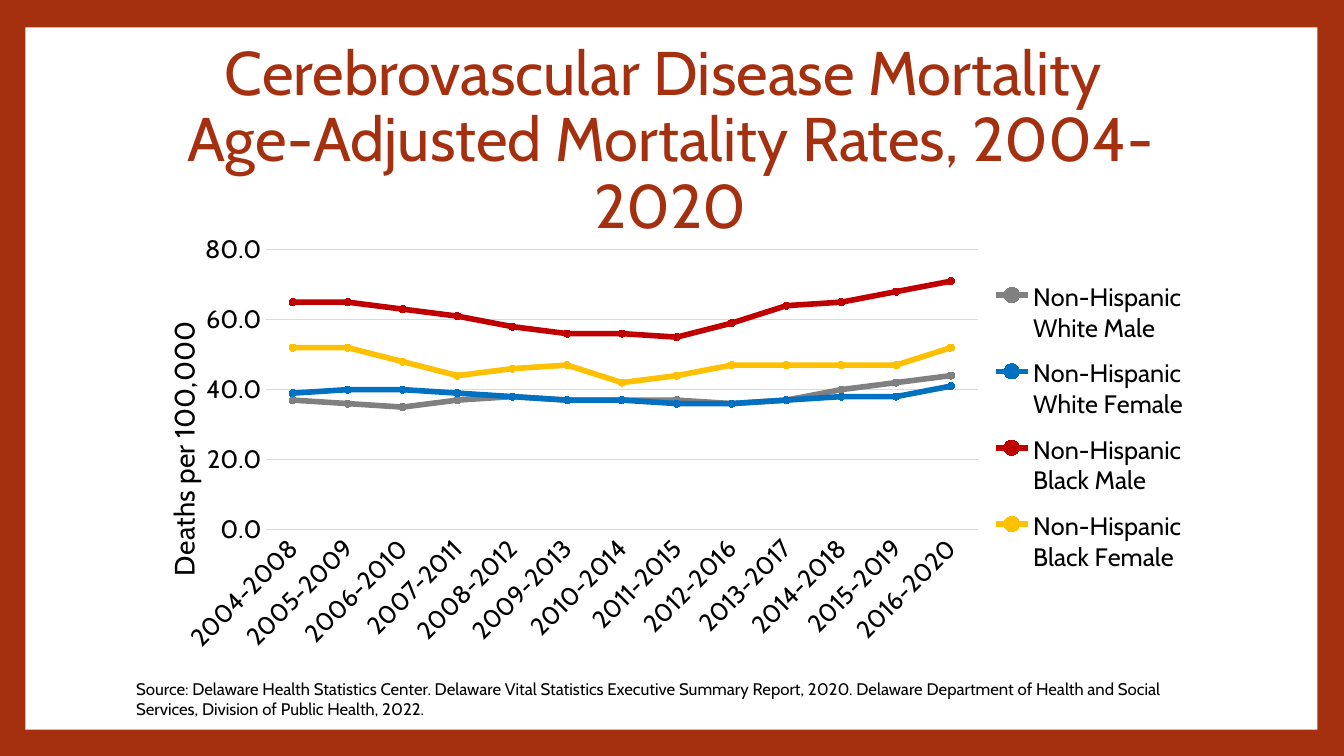
from lxml import etree
from pptx import Presentation
from pptx.chart.data import CategoryChartData
from pptx.dml.color import RGBColor
from pptx.enum.chart import XL_CHART_TYPE, XL_LEGEND_POSITION, XL_MARKER_STYLE, XL_TICK_MARK
from pptx.enum.shapes import MSO_SHAPE
from pptx.enum.text import MSO_ANCHOR, PP_ALIGN
from pptx.oxml.ns import qn
from pptx.util import Cm, Pt

LINE_MARKERS = XL_CHART_TYPE.LINE_MARKERS
LEGEND_RIGHT = XL_LEGEND_POSITION.RIGHT
CIRCLE = XL_MARKER_STYLE.CIRCLE
NO_TICK = XL_TICK_MARK.NONE
RECTANGLE = MSO_SHAPE.RECTANGLE
TOP, MIDDLE = MSO_ANCHOR.TOP, MSO_ANCHOR.MIDDLE
LEFT, CENTER = PP_ALIGN.LEFT, PP_ALIGN.CENTER

FONT = "Cabin"
COLORS = {
    "rust": "A5300F",
    "panel": "FFFFFF",
    "text": "000000",
    "grid": "D9D9D9",
    "gray": "808080",
    "blue": "0070C0",
    "red": "C00000",
    "gold": "FFC000",
}
CONTENT_LEFT, CONTENT_WIDTH = Cm(3.18), Cm(27.43)

TITLE = "Cerebrovascular Disease Mortality \vAge-Adjusted Mortality Rates, 2004-2020"
SOURCE = (
    "Source: Delaware Health Statistics Center. Delaware Vital Statistics Executive "
    "Summary Report, 2020. Delaware Department of Health and Social Services, "
    "Division of Public Health, 2022."
)
PERIODS = [f"{year}-{year + 4}" for year in range(2004, 2017)]
RATES = [
    ("Non-Hispanic White Male", "gray",
     (37, 36, 35, 37, 38, 37, 37, 37, 36, 37, 40, 42, 44)),
    ("Non-Hispanic White Female", "blue",
     (39, 40, 40, 39, 38, 37, 37, 36, 36, 37, 38, 38, 41)),
    ("Non-Hispanic Black Male", "red",
     (65, 65, 63, 61, 58, 56, 56, 55, 59, 64, 65, 68, 71)),
    ("Non-Hispanic Black Female", "gold",
     (52, 52, 48, 44, 46, 47, 42, 44, 47, 47, 47, 47, 52)),
]


def rgb(name):
    return RGBColor.from_string(COLORS[name])


def set_font(font, size, color="text"):
    font.name = FONT
    font.size = Pt(size)
    font.bold = False
    font.color.rgb = rgb(color)


def set_line(line, color, width):
    line.color.rgb = rgb(color)
    line.width = Pt(width)


def add_text(slide, text, top, height, size, color="text", align=LEFT,
             anchor=TOP, spacing=1.0):
    box = slide.shapes.add_textbox(CONTENT_LEFT, top, CONTENT_WIDTH, height)
    frame = box.text_frame
    frame.word_wrap = True
    frame.vertical_anchor = anchor
    para = frame.paragraphs[0]
    para.text = text
    para.alignment = align
    para.line_spacing = spacing
    for span in para.runs:
        set_font(span.font, size, color)


def add_panel(slide):
    panel = slide.shapes.add_shape(RECTANGLE, Cm(0.64), Cm(0.69), Cm(32.56), Cm(17.7))
    panel.shadow.inherit = False
    panel.fill.solid()
    panel.fill.fore_color.rgb = rgb("panel")
    panel.line.fill.background()


def place(element, inner=False, **fractions):
    """Fix a chart part at fractions (x, y, w, h) of the chart's size."""
    for old in element.findall(qn("c:layout")):
        element.remove(old)
    layout = etree.Element(qn("c:layout"))
    manual = etree.SubElement(layout, qn("c:manualLayout"))
    if inner:
        etree.SubElement(manual, qn("c:layoutTarget"), val="inner")
    for key in "xy":
        etree.SubElement(manual, qn(f"c:{key}Mode"), val="edge")
    for key, value in fractions.items():
        etree.SubElement(manual, qn(f"c:{key}"), val=str(value))
    overlay = element.find(qn("c:overlay"))
    if overlay is None:
        element.insert(0, layout)
    else:
        overlay.addprevious(layout)


def format_period_axis(axis):
    axis.major_tick_mark = NO_TICK
    set_line(axis.format.line, "grid", 0.75)
    set_font(axis.tick_labels.font, 18)
    body = axis._element.find(qn("c:txPr")).find(qn("a:bodyPr"))
    body.set("rot", str(-45 * 60000))
    body.set("vert", "horz")


def format_rate_axis(axis):
    axis.minimum_scale, axis.maximum_scale, axis.major_unit = 0, 80, 20
    axis.major_tick_mark = NO_TICK
    axis.format.line.fill.background()
    set_line(axis.major_gridlines.format.line, "grid", 0.75)
    set_font(axis.tick_labels.font, 18)
    axis.tick_labels.number_format = "0.0"
    axis.tick_labels.number_format_is_linked = False
    para = axis.axis_title.text_frame.paragraphs[0]
    span = para.add_run()
    span.text = "Deaths per 100,000"
    set_font(span.font, 20)
    place(axis.axis_title._element, x=0.03, y=0.2)


def format_series(series, color):
    series.smooth = False
    set_line(series.format.line, color, 4)
    marker = series.marker
    marker.style = CIRCLE
    marker.size = 5
    marker.format.fill.solid()
    marker.format.fill.fore_color.rgb = rgb(color)
    set_line(marker.format.line, color, 0.75)


def add_rate_chart(slide):
    data = CategoryChartData(number_format="0.0")
    data.categories = PERIODS
    for name, _, values in RATES:
        data.add_series(name, values)
    chart = slide.shapes.add_chart(
        LINE_MARKERS, CONTENT_LEFT, Cm(5.72), CONTENT_WIDTH, Cm(11.23), data
    ).chart
    chart.has_title = False
    set_font(chart.font, 10)
    chart.plots[0].vary_by_categories = False
    for series, (_, color, _) in zip(chart.plots[0].series, RATES):
        format_series(series, color)
    format_period_axis(chart.category_axis)
    format_rate_axis(chart.value_axis)
    place(chart.category_axis._element.getparent(), inner=True,
          x=0.128, y=0.051, w=0.655, h=0.628)
    chart.has_legend = True
    chart.legend.position = LEGEND_RIGHT
    chart.legend.include_in_layout = False
    set_font(chart.legend.font, 18)
    place(chart.legend._element, x=0.785, y=0.09, w=0.2, h=0.72)


def main():
    deck = Presentation()
    deck.slide_width, deck.slide_height = Cm(33.87), Cm(19.05)
    page = deck.slides.add_slide(deck.slide_layouts[6])
    page.background.fill.solid()
    page.background.fill.fore_color.rgb = rgb("rust")
    add_panel(page)
    add_text(page, TITLE, Cm(1.7), Cm(3.76), 44, color="rust",
             align=CENTER, anchor=MIDDLE, spacing=0.9)
    add_text(page, SOURCE, Cm(16.97), Cm(1.27), 12)
    add_rate_chart(page)
    deck.save("out.pptx")


if __name__ == "__main__":
    main()
